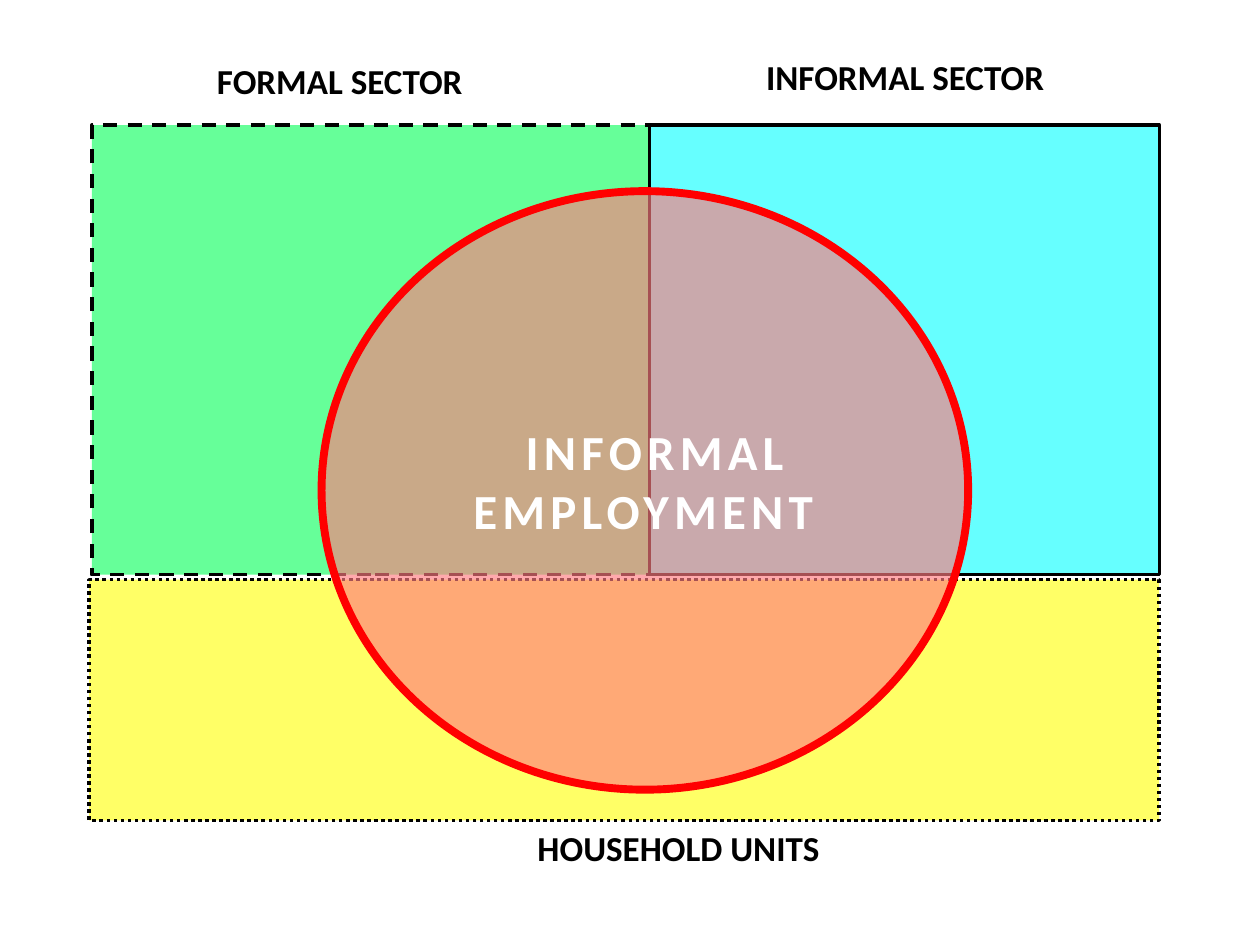
from dataclasses import dataclass
from typing import Optional

from pptx import Presentation
from pptx.dml.color import RGBColor
from pptx.enum import dml, shapes, text
from pptx.oxml.ns import qn
from pptx.util import Pt

HUES = {
    "black": "000000",
    "white": "FFFFFF",
    "yellow": "FFFF66",
    "green": "66FF99",
    "cyan": "66FFFF",
    "pink": "FF7C80",
    "red": "FF0000",
}
RECT = shapes.MSO_SHAPE.RECTANGLE
OVAL = shapes.MSO_SHAPE.OVAL
DASH = dml.MSO_LINE


@dataclass
class Zone:
    kind: shapes.MSO_SHAPE
    left: float
    top: float
    wide: float
    high: float
    fill: str
    edge: str = "black"
    width: float = 2
    dash: Optional[dml.MSO_LINE] = None
    alpha: int = 100


@dataclass
class Label:
    words: str
    left: float
    top: float
    wide: float
    high: float = 31.5
    size: float = 20
    hue: str = "black"
    space: int = 0
    indent: float = 0


TOP, HIGH = 71.5, 257
SPLIT, RIGHT = 371.25, 662.5
ZONES = [
    Zone(RECT, 51, 331.25, RIGHT - 51, 137.5, "yellow", dash=DASH.ROUND_DOT),
    Zone(RECT, 52.5, TOP, SPLIT - 52.5, HIGH, "green", dash=DASH.DASH),
    Zone(RECT, SPLIT, TOP, RIGHT - SPLIT, HIGH, "cyan"),
    Zone(OVAL, 183.75, 109.25, 369.5, 342, "pink", "red", 4.5, alpha=65),
]
LABELS = [
    Label("INFORMAL SECTOR", 380, 28.25, 274.5),
    Label("FORMAL SECTOR", 93.5, 30.5, 201.5),
    Label("HOUSEHOLD UNITS", 229, 468.75, 317.5),
    Label("INFORMAL EMPLOYMENT", 237, 237.5, 261.25, 75, 28, "white", 300, 16),
]


def paint(name: str) -> RGBColor:
    return RGBColor.from_string(HUES[name])


def draw(slide, zone: Zone) -> None:
    box = slide.shapes.add_shape(
        zone.kind, Pt(zone.left), Pt(zone.top), Pt(zone.wide), Pt(zone.high))
    box.shadow.inherit = False
    box.fill.solid()
    box.fill.fore_color.rgb = paint(zone.fill)
    if zone.alpha < 100:
        tint = box.element.spPr.find(qn("a:solidFill"))[0]
        tint.makeelement(qn("a:alpha"), {})
        mark = tint.makeelement(qn("a:alpha"), {"val": str(zone.alpha * 1000)})
        tint.append(mark)
    box.line.color.rgb = paint(zone.edge)
    box.line.width = Pt(zone.width)
    if zone.dash is not None:
        box.line.dash_style = zone.dash


def write(slide, label: Label) -> None:
    box = slide.shapes.add_textbox(
        Pt(label.left), Pt(label.top), Pt(label.wide), Pt(label.high))
    frame = box.text_frame
    frame.word_wrap = True
    frame.auto_size = text.MSO_AUTO_SIZE.SHAPE_TO_FIT_TEXT
    frame.text = label.words
    para = frame.paragraphs[0]
    para.alignment = text.PP_ALIGN.CENTER
    if label.indent:
        props = para._p.get_or_add_pPr()
        props.set("marL", "0")
        props.set("indent", str(Pt(label.indent)))
    run = para.runs[0]
    run.font.name = "Calibri"
    run.font.size = Pt(label.size)
    run.font.bold = True
    run.font.color.rgb = paint(label.hue)
    if label.space:
        run._r.get_or_add_rPr().set("spc", str(label.space))


def main() -> None:
    deck = Presentation()
    deck.slide_width, deck.slide_height = Pt(720), Pt(540)
    slide = deck.slides.add_slide(deck.slide_layouts[6])
    for zone in ZONES:
        draw(slide, zone)
    for label in LABELS:
        write(slide, label)
    deck.save("out.pptx")


if __name__ == "__main__":
    main()
